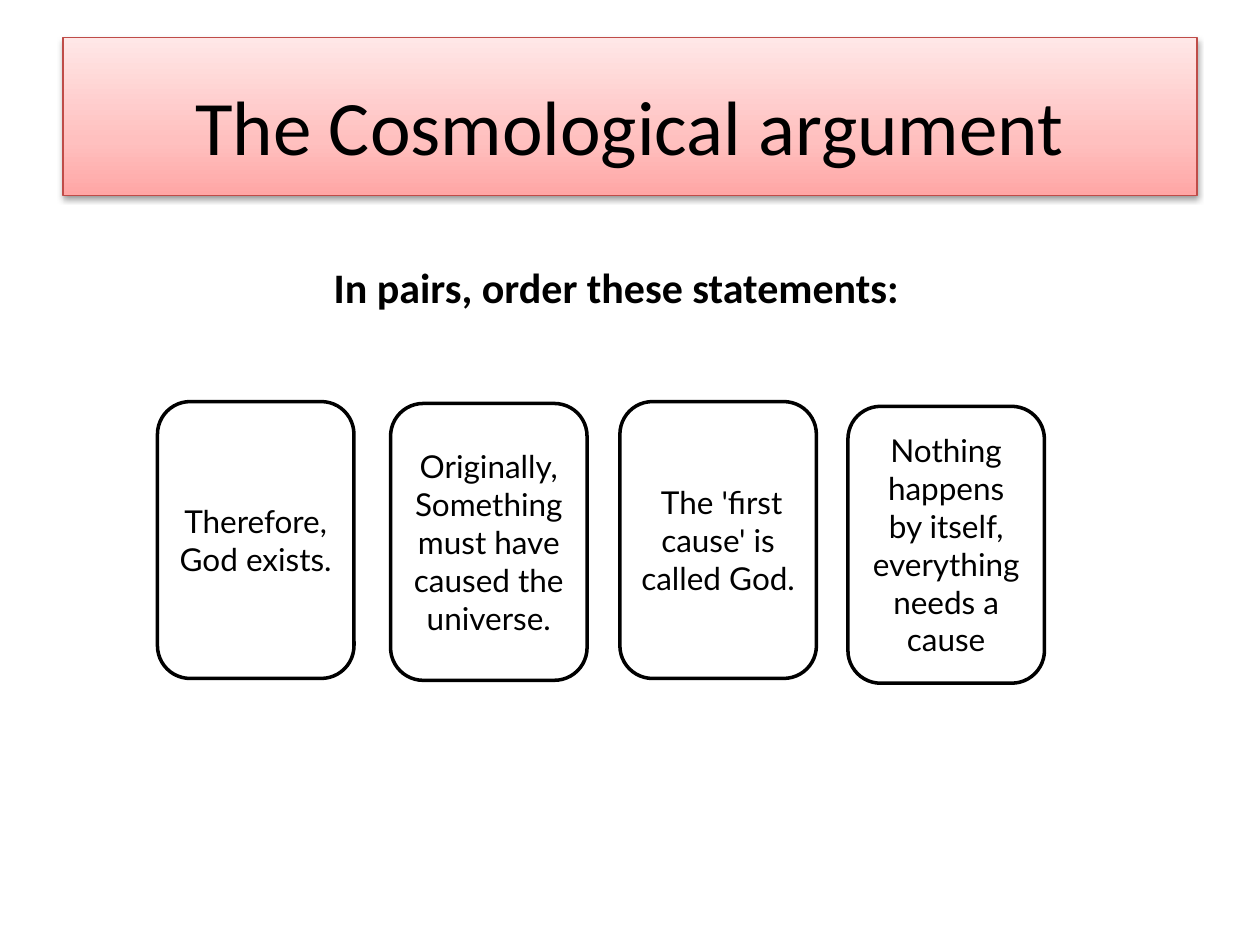
from dataclasses import dataclass

from pptx import Presentation
from pptx.dml.color import RGBColor
from pptx.enum.shapes import MSO_SHAPE
from pptx.enum.text import MSO_ANCHOR, MSO_AUTO_SIZE, PP_ALIGN
from pptx.oxml import parse_xml
from pptx.oxml.ns import nsdecls
from pptx.util import Inches, Pt

CENTER, LEFT = PP_ALIGN.CENTER, PP_ALIGN.LEFT
MIDDLE = MSO_ANCHOR.MIDDLE
ROUNDED = MSO_SHAPE.ROUNDED_RECTANGLE
GROW = MSO_AUTO_SIZE.SHAPE_TO_FIT_TEXT
WIDTH, HEIGHT = Inches(10), Inches(7.5)


@dataclass(frozen=True)
class Theme:
    ink: str = "000000"
    paper: str = "FFFFFF"
    border: str = "BF4C48"
    banner: tuple = ((0, "FFA6A5"), (35, "FFC0BF"), (100, "FFE7E7"))
    font: str = "Calibri"
    card_font: str = "Lato"
    title: int = 44
    prompt: int = 24
    card: int = 18


@dataclass(frozen=True)
class Card:
    text: str
    left: float
    top: float


THEME = Theme()
CARD_W, CARD_H = 0.156, 0.293
CARDS = (
    Card("Therefore, God exists.", 0.125, 0.425),
    Card("Originally, Something must have caused the universe.", 0.31, 0.427),
    Card(" The 'first cause' is called God.", 0.492, 0.425),
    Card("Nothing happens by itself, everything needs a cause", 0.673, 0.43),
)


def box(left: float, top: float, width: float, height: float) -> tuple:
    """Turn shares of the slide into lengths."""
    return (int(left * WIDTH), int(top * HEIGHT),
            int(width * WIDTH), int(height * HEIGHT))


def write(tf, text: str, *, size: int, font: str = THEME.font,
          bold: bool = False, align=CENTER, spacing: float = 1.0) -> None:
    """Put one formatted paragraph in a text frame."""
    p = tf.paragraphs[0]
    p.alignment, p.line_spacing = align, spacing
    r = p.add_run()
    r.text = text
    r.font.size, r.font.name, r.font.bold = Pt(size), font, bold
    r.font.color.rgb = RGBColor.from_string(THEME.ink)


def outline(sp, color: str, width: float) -> None:
    """Give a shape a solid outline."""
    sp.line.color.rgb = RGBColor.from_string(color)
    sp.line.width = Pt(width)


def add_title(s, text: str) -> None:
    """Format the title placeholder as a shaded banner."""
    sp = s.shapes.title
    sp.left, sp.top, sp.width, sp.height = box(0.05, 0.04, 0.9, 0.167)
    stops = "".join(
        f'<a:gs pos="{pos * 1000}"><a:srgbClr val="{color}"/></a:gs>'
        for pos, color in THEME.banner)
    pr = sp.element.spPr
    pr.append(parse_xml(
        f'<a:gradFill {nsdecls("a")}><a:gsLst>{stops}</a:gsLst>'
        '<a:lin ang="16200000" scaled="0"/></a:gradFill>'))
    outline(sp, THEME.border, 0.75)
    pr.append(parse_xml(
        f'<a:effectLst {nsdecls("a")}><a:outerShdw blurRad="{Pt(3.1)}" '
        f'dist="{Pt(1.6)}" dir="5400000" rotWithShape="0">'
        f'<a:srgbClr val="{THEME.ink}"><a:alpha val="38000"/></a:srgbClr>'
        '</a:outerShdw></a:effectLst>'))
    sp.text_frame.vertical_anchor = MIDDLE
    write(sp.text_frame, text, size=THEME.title, spacing=1.17)


def add_prompt(s, text: str) -> None:
    """Add the instruction line above the cards."""
    tf = s.shapes.add_textbox(*box(0.255, 0.261, 0.474, 0.076)).text_frame
    tf.word_wrap, tf.auto_size = False, GROW
    write(tf, text, size=THEME.prompt, bold=True, align=LEFT, spacing=1.17)


def add_card(s, card: Card) -> None:
    """Add one statement card."""
    sp = s.shapes.add_shape(ROUNDED, *box(card.left, card.top, CARD_W, CARD_H))
    sp.shadow.inherit = False
    sp.fill.solid()
    sp.fill.fore_color.rgb = RGBColor.from_string(THEME.paper)
    outline(sp, THEME.ink, 2)
    tf = sp.text_frame
    tf.word_wrap, tf.vertical_anchor = True, MIDDLE
    tf.margin_left = tf.margin_right = Inches(0.09)
    tf.margin_top = tf.margin_bottom = Inches(0.04)
    write(tf, card.text, size=THEME.card, font=THEME.card_font)


def main() -> None:
    """Build and save the slide."""
    prs = Presentation()
    prs.slide_width, prs.slide_height = WIDTH, HEIGHT
    s = prs.slides.add_slide(prs.slide_layouts[5])
    add_title(s, "The Cosmological argument")
    for card in CARDS:
        add_card(s, card)
    add_prompt(s, "In pairs, order these statements:")
    prs.save("out.pptx")


if __name__ == "__main__":
    main()
